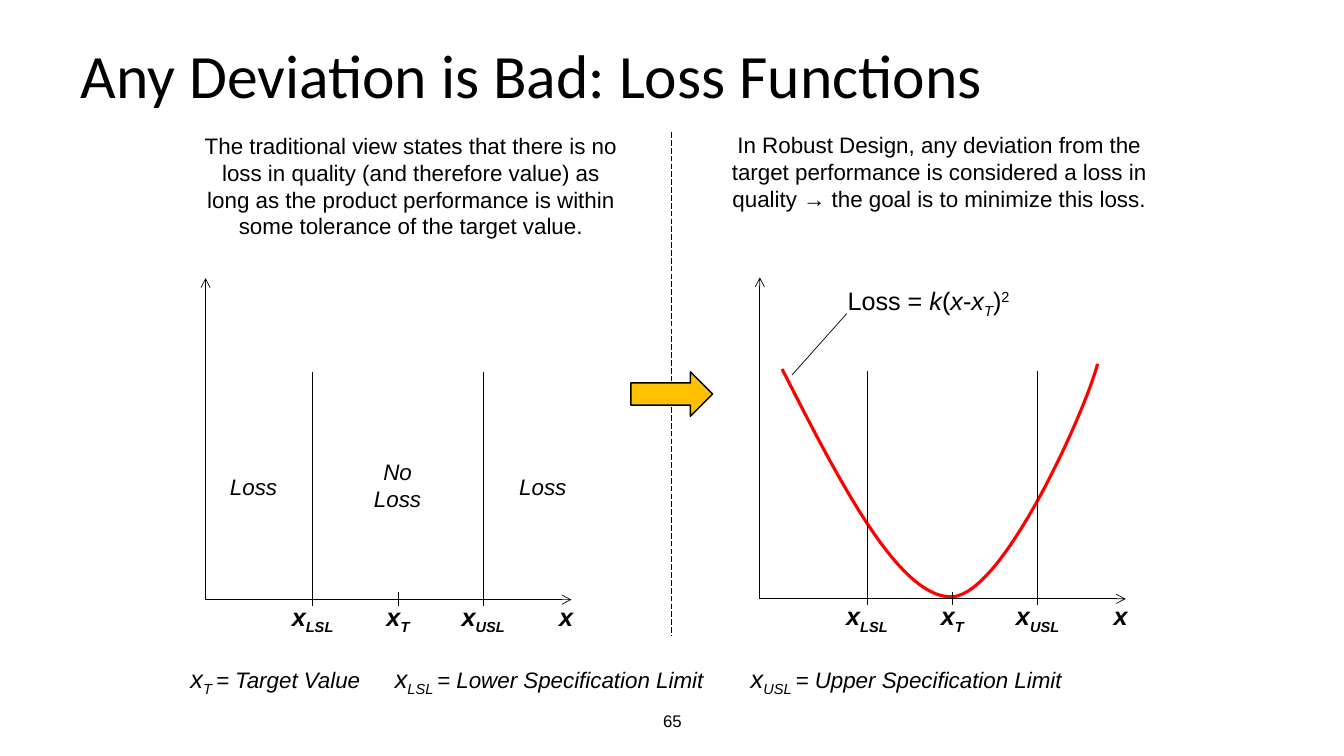
from lxml import etree
from pptx import Presentation
from pptx.dml.color import RGBColor
from pptx.enum.dml import MSO_LINE
from pptx.enum.shapes import MSO_CONNECTOR, MSO_SHAPE
from pptx.enum.text import MSO_ANCHOR, MSO_AUTO_SIZE, PP_ALIGN
from pptx.oxml.ns import qn
from pptx.util import Cm, Pt

STRAIGHT = MSO_CONNECTOR.STRAIGHT
RIGHT_ARROW = MSO_SHAPE.RIGHT_ARROW
LONG_DASH = MSO_LINE.LONG_DASH
MIDDLE, TOP = MSO_ANCHOR.MIDDLE, MSO_ANCHOR.TOP
GROW = MSO_AUTO_SIZE.SHAPE_TO_FIT_TEXT
LEFT, CENTER = PP_ALIGN.LEFT, PP_ALIGN.CENTER

COLORS = {"ink": "000000", "curve": "FF0000", "arrow": "FFC000"}
COLORS = {role: RGBColor.from_string(value) for role, value in COLORS.items()}

prs = Presentation()
prs.slide_width, prs.slide_height = Cm(33.87), Cm(19.05)
slide = prs.slides.add_slide(prs.slide_layouts[6])
shapes = slide.shapes


def add_text(box, paragraphs, align=CENTER, anchor=TOP, wrap=False, font="Arial"):
    """Each run is (text, size, style letters b and i, baseline percent)."""
    frame = shapes.add_textbox(*(Cm(v) for v in box)).text_frame
    frame.word_wrap = wrap
    frame.vertical_anchor = anchor
    if anchor == TOP:
        frame.auto_size = GROW
    for number, runs in enumerate(paragraphs):
        paragraph = frame.add_paragraph() if number else frame.paragraphs[0]
        paragraph.alignment = align
        for text, size, style, baseline in runs:
            run = paragraph.add_run()
            run.text = text
            run.font.name, run.font.size = font, Pt(size)
            run.font.bold, run.font.italic = "b" in style, "i" in style
            run.font.color.rgb = COLORS["ink"]
            if baseline:
                run._r.get_or_add_rPr().set("baseline", str(baseline * 1000))


def add_line(x1, y1, x2, y2, dash=None, arrow=False):
    connector = shapes.add_connector(STRAIGHT, Cm(x1), Cm(y1), Cm(x2), Cm(y2))
    connector.line.color.rgb = COLORS["ink"]
    connector.line.width = Pt(0.5)
    if dash:
        connector.line.dash_style = dash
    properties = connector._element.spPr
    if arrow:
        etree.SubElement(properties.find(qn("a:ln")), qn("a:tailEnd"), type="arrow")
    etree.SubElement(properties, qn("a:effectLst"))


# Quadratic loss curve, sampled from two cubic Bezier pieces
STEPS = 30
loss_pieces = [
    [(19.71, 9.3), (21.18, 12.19), (22.66, 15.06), (23.98, 15.04)],
    [(23.98, 15.04), (25.3, 15.01), (27.41, 10.21), (27.66, 9.17)],
]
loss_points = []
for piece in loss_pieces:
    for step in range(STEPS + 1):
        t = step / STEPS
        weights = ((1 - t) ** 3, 3 * t * (1 - t) ** 2, 3 * t**2 * (1 - t), t**3)
        loss_points.append(tuple(
            Cm(sum(w * point[axis] for w, point in zip(weights, piece)))
            for axis in (0, 1)
        ))
builder = shapes.build_freeform(*loss_points[0], scale=1.0)
builder.add_line_segments(loss_points[1:], close=False)
loss_curve = builder.convert_to_shape()
loss_curve.shadow.inherit = False
loss_curve.fill.background()
loss_curve.line.color.rgb = COLORS["curve"]
loss_curve.line.width = Pt(2.25)

# Title and page number
add_text((1.78, 0.03, 29.21, 3.68),
         [[("Any Deviation is Bad: Loss Functions", 44, "", 0)]],
         align=LEFT, anchor=MIDDLE, wrap=True, font="Calibri")
add_text((11.23, 17.65, 11.43, 1.02), [[("65", 12, "", 0)]],
         anchor=MIDDLE, wrap=True)

# Axes, specification limits and axis labels of both diagrams
FIRST_TICK, TICK_GAP = 2.7, 2.15
for origin_x, origin_y in ((5.18, 15.11), (19.15, 15.09)):
    add_line(origin_x, origin_y, origin_x + 9.22, origin_y, arrow=True)
    add_line(origin_x, origin_y, origin_x, origin_y - 8.1, arrow=True)
    for number, (subscript, rise, width) in enumerate(
            (("LSL", 5.74, 1.68), ("T", 0.18, 1.12), ("USL", 5.74, 1.7))):
        tick_x = origin_x + FIRST_TICK + number * TICK_GAP
        add_line(tick_x, origin_y + 0.15, tick_x, origin_y - rise)
        add_text((tick_x - width / 2, origin_y - 0.08, width, 1.02),
                 [[("x", 18, "bi", 0), (subscript, 18, "bi", -25)]])
    add_text((origin_x + 8.66, origin_y - 0.08, 0.86, 1.02),
             [[("x", 18, "bi", 0)]])

# Zones of the traditional view
for left, top, height, words in (
        (5.54, 11.79, 0.94, ["Loss"]),
        (9.17, 11.43, 1.63, ["No", "Loss"]),
        (12.83, 11.79, 0.94, ["Loss"])):
    add_text((left, top, 1.7, height), [[(word, 16, "i", 0)] for word in words])

# Formula with its leader
add_text((21.11, 7.06, 4.65, 1.02), [[
    ("Loss = ", 18, "", 0), ("k", 18, "i", 0), ("(", 18, "", 0),
    ("x", 18, "i", 0), ("-", 18, "", 0), ("x", 18, "i", 0),
    ("T", 18, "i", -25), (")", 18, "", 0), ("2", 18, "", 30),
]], align=LEFT)
add_line(19.96, 9.45, 21.34, 7.9)

# Descriptions of the two views
add_text((4.88, 3.2, 10.95, 2.97), [[(
    "The traditional view states that there is no loss in quality (and "
    "therefore value) as long as the product performance is within some "
    "tolerance of the target value.", 16, "", 0)]], wrap=True)
add_text((18.03, 3.18, 11.28, 2.29), [[(
    "In Robust Design, any deviation from the target performance is "
    "considered a loss in quality → the goal is to minimize this loss.",
    16, "", 0)]], wrap=True)

# Legend of the symbols
for left, width, subscript, meaning in (
        (4.55, 4.93, "T ", "= Target Value"),
        (9.7, 8.43, "LSL ", "= Lower Specification Limit"),
        (18.67, 8.51, "USL ", "= Upper Specification Limit")):
    add_text((left, 16.59, width, 1.02), [[
        ("x", 18, "i", 0), (subscript, 18, "i", -25), (meaning, 16, "i", 0),
    ]], align=LEFT)

# Divider and the step from the old view to the new one
add_line(16.93, 3.33, 16.93, 16.03, dash=LONG_DASH)
step_arrow = shapes.add_shape(RIGHT_ARROW, Cm(15.9), Cm(9.37), Cm(2.06), Cm(1.12))
step_arrow.shadow.inherit = False
step_arrow.fill.solid()
step_arrow.fill.fore_color.rgb = COLORS["arrow"]
step_arrow.line.color.rgb = COLORS["ink"]
step_arrow.line.width = Pt(1)

prs.save("out.pptx")
